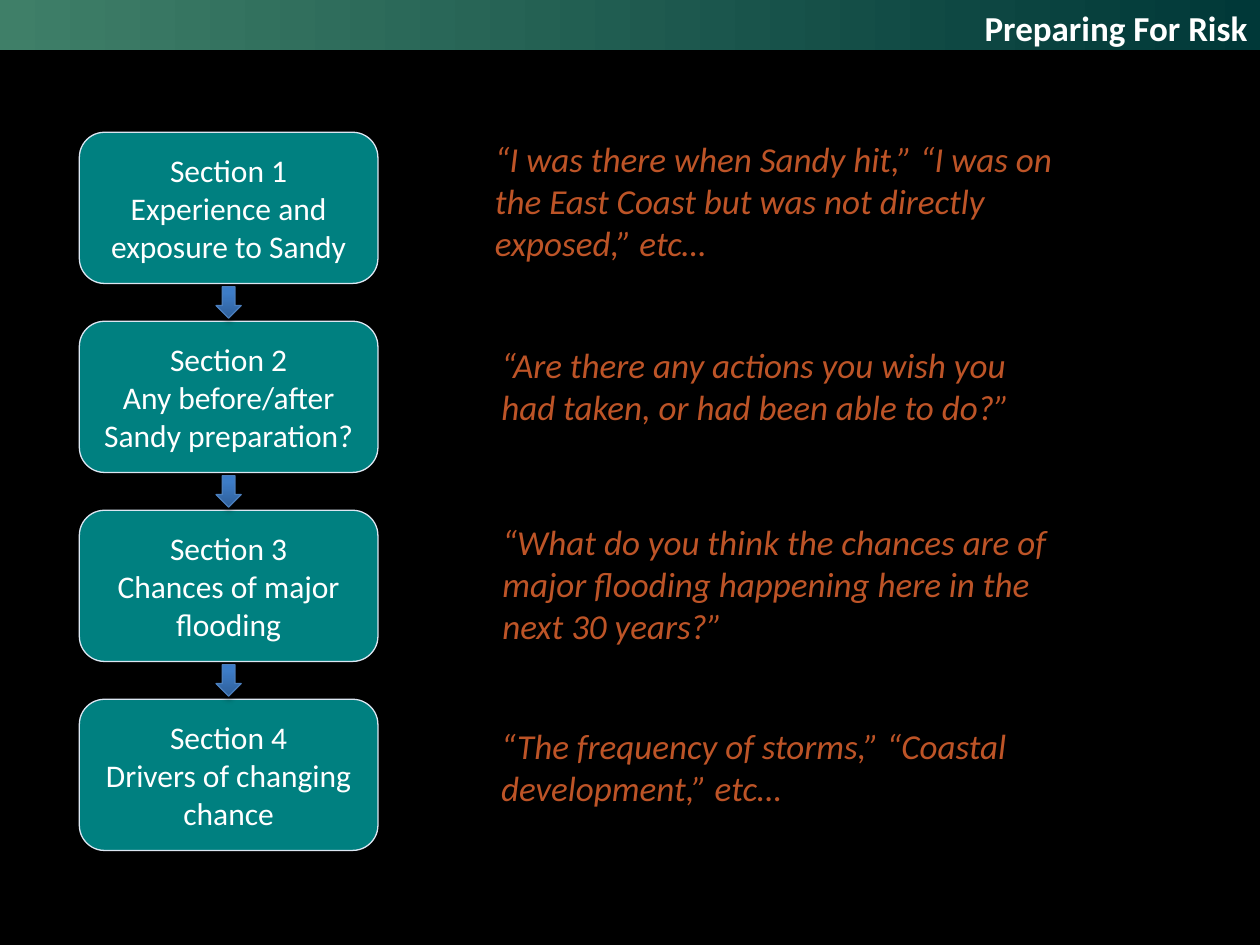
from dataclasses import dataclass

from lxml import etree
from pptx import Presentation
from pptx.dml.color import RGBColor
from pptx.enum.shapes import MSO_SHAPE
from pptx.enum.text import MSO_ANCHOR, PP_ALIGN
from pptx.oxml.ns import qn
from pptx.util import Inches, Pt

RECT, ROUNDED, DOWN_ARROW = (
    MSO_SHAPE.RECTANGLE, MSO_SHAPE.ROUNDED_RECTANGLE, MSO_SHAPE.DOWN_ARROW)
LEFT, CENTER, RIGHT = PP_ALIGN.LEFT, PP_ALIGN.CENTER, PP_ALIGN.RIGHT
TOP, MIDDLE = MSO_ANCHOR.TOP, MSO_ANCHOR.MIDDLE


@dataclass(frozen=True)
class Theme:
    font: str = "Calibri"
    large: int = 20
    body: int = 18
    hairline: float = 0.75
    background: str = "000000"
    text: str = "FFFFFF"
    quote: str = "BD5427"
    box: str = "008080"
    box_line: str = "DCE6F2"
    arrow_line: str = "4B7EBC"
    shadow: str = "000000"
    band: tuple = ((0, "3F7F68"), (100, "003838"))
    arrow: tuple = ((0, "2F5F99"), (80, "3D7CC7"), (100, "3A7CCB"))


THEME = Theme()

SLIDE_W, SLIDE_H = 10, 7.5
HEADER_H = 0.4
TITLE_X = 1.18
BOX_X, BOX_W, BOX_H = 0.63, 2.37, 1.2
FIRST_ROW, ROW_STEP = 1.05, 1.5
ARROW_W, ARROW_H = 0.2, 0.25
QUOTE_X, QUOTE_W = 3.83, 4.69

SECTIONS = [
    ("Section 1", "Experience and exposure to Sandy"),
    ("Section 2", "Any before/after Sandy preparation?"),
    ("Section 3", "Chances of major flooding"),
    ("Section 4", "Drivers of changing chance"),
]
OPENING_QUOTE = ("“I was there when Sandy hit,” “I was on the East Coast "
                 "but was not directly exposed,” etc…")
# top, height, text
QUOTES = [
    (2.63, 1.03, "“Are there any actions you wish you had taken, "
                 "or had been able to do?”"),
    (4.02, 1.2, "“What do you think the chances are of major flooding "
                "happening here in the next 30 years?”"),
    (5.65, 1, "“The frequency of storms,” “Coastal development,” etc…"),
]


def rgb(color):
    return RGBColor.from_string(color)


def add_shape(slide, kind, *box, fill=None, line=None):
    sp = slide.shapes.add_shape(kind, *map(Inches, box))
    sp.shadow.inherit = False
    if fill:
        sp.fill.solid()
        sp.fill.fore_color.rgb = rgb(fill)
    else:
        sp.fill.background()
    if line:
        sp.line.color.rgb = rgb(line)
        sp.line.width = Pt(THEME.hairline)
    else:
        sp.line.fill.background()
    return sp


def add_color(parent, color):
    return etree.SubElement(parent, qn("a:srgbClr"), val=color)


def set_gradient(sp, stops, angle=0):
    """Fill with (percent, colour) stops; the angle runs counter-clockwise."""
    sp.fill.gradient()
    sp.fill.gradient_angle = angle
    stop_list = sp.element.spPr.find(".//" + qn("a:gsLst"))
    for old in list(stop_list):
        stop_list.remove(old)
    for percent, color in stops:
        stop = etree.SubElement(stop_list, qn("a:gs"), pos=str(percent * 1000))
        add_color(stop, color)


def add_soft_shadow(sp):
    effects = sp.element.spPr.find(qn("a:effectLst"))
    shadow = etree.SubElement(
        effects, qn("a:outerShdw"), blurRad=str(Pt(3.1)), dist=str(Pt(1.8)),
        dir="5400000", rotWithShape="0")
    color = add_color(shadow, THEME.shadow)
    etree.SubElement(color, qn("a:alpha"), val="35000")


def write(sp, lines, size, color, align=LEFT, anchor=TOP,
          bold=False, italic=False):
    tf = sp.text_frame
    tf.word_wrap = True
    tf.vertical_anchor = anchor
    for i, line in enumerate(lines):
        p = tf.add_paragraph() if i else tf.paragraphs[0]
        p.alignment = align
        r = p.add_run()
        r.text = line
        r.font.name = THEME.font
        r.font.size = Pt(size)
        r.font.bold = bold
        r.font.italic = italic
        r.font.color.rgb = rgb(color)


def add_text_box(slide, *box):
    return slide.shapes.add_textbox(*map(Inches, box))


def add_header(slide, title):
    band = add_shape(slide, RECT, 0, 0, SLIDE_W, HEADER_H)
    set_gradient(band, THEME.band)
    tb = add_text_box(slide, TITLE_X, 0, SLIDE_W - TITLE_X, HEADER_H)
    write(tb, [title], THEME.large, THEME.text, align=RIGHT, bold=True)


def add_section(slide, row, lines):
    sp = add_shape(slide, ROUNDED, BOX_X, FIRST_ROW + row * ROW_STEP,
                   BOX_W, BOX_H, fill=THEME.box, line=THEME.box_line)
    write(sp, lines, THEME.body, THEME.text, align=CENTER, anchor=MIDDLE)


def add_arrow(slide, row):
    """Point from the section in this row to the next one."""
    gap_top = FIRST_ROW + row * ROW_STEP + BOX_H
    gap = ROW_STEP - BOX_H
    sp = add_shape(slide, DOWN_ARROW, BOX_X + (BOX_W - ARROW_W) / 2,
                   gap_top + (gap - ARROW_H) / 2, ARROW_W, ARROW_H,
                   line=THEME.arrow_line)
    set_gradient(sp, THEME.arrow, angle=90)
    add_soft_shadow(sp)


def write_quote(sp, text):
    write(sp, [text], THEME.large, THEME.quote, italic=True)


def main():
    prs = Presentation()
    prs.slide_width, prs.slide_height = Inches(SLIDE_W), Inches(SLIDE_H)
    slide = prs.slides.add_slide(prs.slide_layouts[6])
    slide.background.fill.solid()
    slide.background.fill.fore_color.rgb = rgb(THEME.background)

    add_header(slide, "Preparing For Risk")
    write_quote(add_text_box(slide, QUOTE_X, 1.04, 4.92, 1.17), OPENING_QUOTE)
    for row, lines in enumerate(SECTIONS):
        add_section(slide, row, lines)
    for top, height, text in QUOTES:
        write_quote(add_shape(slide, ROUNDED, QUOTE_X, top, QUOTE_W, height),
                    text)
    for row in range(len(SECTIONS) - 1):
        add_arrow(slide, row)

    prs.save("out.pptx")


if __name__ == "__main__":
    main()
